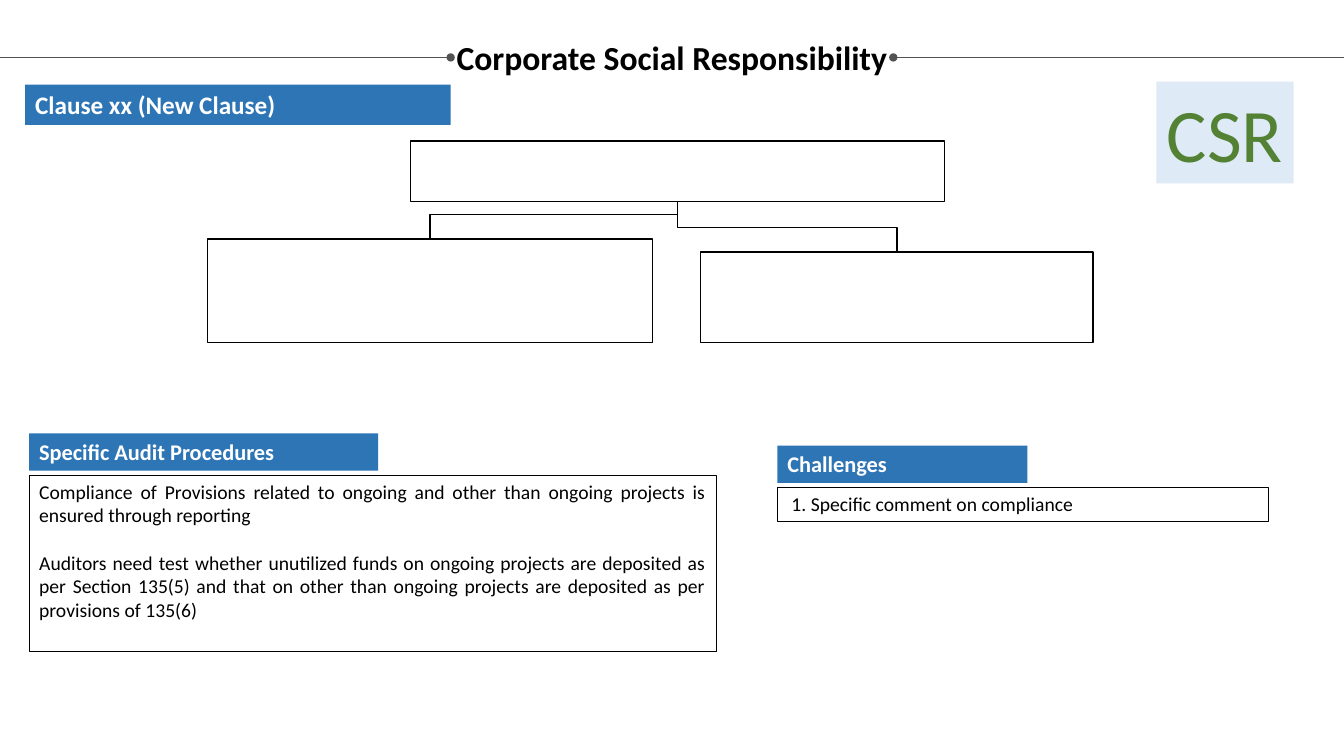
from dataclasses import dataclass

from lxml.etree import SubElement
from pptx import Presentation
from pptx.dml.color import RGBColor
from pptx.enum.shapes import MSO_CONNECTOR, MSO_SHAPE
from pptx.enum.text import MSO_ANCHOR, MSO_AUTO_SIZE, PP_ALIGN
from pptx.oxml.ns import qn
from pptx.util import Inches, Pt


@dataclass(frozen=True)
class Theme:
    font: str = "Calibri"
    ink: str = "000000"
    paper: str = "FFFFFF"
    rule: str = "525252"
    blue: str = "2E75B6"
    pale: str = "DEEBF7"
    green: str = "548235"
    title: int = 24
    clause: int = 18
    head: int = 16
    body: int = 14
    badge: int = 54
    thin: float = 0.25
    hair: float = 0.5
    edge: float = 1


THEME = Theme()
WIDTH, HEIGHT = 13.33, 7.5


def color(code):
    return RGBColor.from_string(code)


def write(frame, lines, size, ink, bold=False, align=PP_ALIGN.LEFT, gap=0):
    """Fill a text frame, one paragraph a line, with gap points between them."""
    frame.vertical_anchor = MSO_ANCHOR.TOP
    frame.auto_size = MSO_AUTO_SIZE.NONE
    for i, line in enumerate(lines):
        para = frame.paragraphs[0] if i == 0 else frame.add_paragraph()
        para.text = line
        para.alignment = align
        para.space_before = Pt(gap if i else 0)
        font = para.font
        font.name, font.size, font.bold = THEME.font, Pt(size), bold
        font.color.rgb = color(ink)


def add_box(slide, box, fill=None, edge=None):
    """Add a rectangle with an optional fill and black outline width."""
    shape = slide.shapes.add_shape(MSO_SHAPE.RECTANGLE, *map(Inches, box))
    shape.shadow.inherit = False
    if fill:
        shape.fill.solid()
        shape.fill.fore_color.rgb = color(fill)
    else:
        shape.fill.background()
    if edge:
        shape.line.color.rgb = color(THEME.ink)
        shape.line.width = Pt(edge)
    else:
        shape.line.fill.background()
    shape.text_frame.word_wrap = True
    return shape


def add_rule(slide, start, end, y):
    """Draw a level line that ends in a dot."""
    rule = slide.shapes.add_connector(
        MSO_CONNECTOR.STRAIGHT, Inches(start), Inches(y), Inches(end), Inches(y))
    rule.line.color.rgb = color(THEME.rule)
    rule.line.width = Pt(THEME.hair)
    SubElement(rule.line._get_or_add_ln(), qn("a:tailEnd"), type="oval")
    SubElement(rule._element.spPr, qn("a:effectLst"))


def add_title(slide, box, text, span):
    left, top, width, height = box
    mid = top + 0.16
    add_rule(slide, 0, (WIDTH - span) / 2, mid)
    add_rule(slide, WIDTH, (WIDTH + span) / 2, mid)
    title = slide.shapes.title
    title.left, title.top, title.width, title.height = map(Inches, box)
    frame = title.text_frame
    frame.margin_left = frame.margin_right = 0
    frame.margin_top = frame.margin_bottom = 0
    write(frame, [text], THEME.title, THEME.ink, True, PP_ALIGN.CENTER)
    frame.paragraphs[0].line_spacing = 0.9


def add_banner(slide, box, text, size):
    banner = add_box(slide, box, THEME.blue)
    write(banner.text_frame, [text], size, THEME.paper, True)


def add_panel(slide, box, head, width, lines, align, inset=0.1):
    """Place a banner at the top of the box and a framed text below it."""
    left, top, full, height = box
    add_banner(slide, (left, top, width, 0.37), head, THEME.head)
    drop = 0.41
    panel = add_box(slide, (left, top + drop, full, height - drop), edge=THEME.thin)
    panel.text_frame.margin_left = Inches(inset)
    write(panel.text_frame, lines, THEME.body, THEME.ink, align=align, gap=17)


def add_link(slide, start, end):
    """Join two points with an elbow that bends just above the lower one."""
    (x, y), (to, foot) = start, end
    bend = foot - 0.24
    path = slide.shapes.build_freeform(Inches(x), Inches(y))
    points = [(x, bend), (to, bend), (to, foot)]
    path.add_line_segments([(Inches(a), Inches(b)) for a, b in points], close=False)
    link = path.convert_to_shape()
    link.shadow.inherit = False
    link.fill.background()
    link.line.color.rgb = color(THEME.ink)
    link.line.width = Pt(THEME.edge)


def add_tree(slide, box):
    """Place an empty root over two empty branches."""
    left, top, width, height = box
    root = (left + 2.01, top, 5.3, 0.6)
    leaves = [(left, 4.41, 1.03), (left + width - 3.89, 3.89, 0.9)]
    start = (root[0] + root[2] / 2, top + root[3])
    for x, wide, tall in leaves:
        y = top + height - tall
        add_link(slide, start, (x + wide / 2, y))
        add_box(slide, (x, y, wide, tall), THEME.paper, THEME.edge)
    add_box(slide, root, THEME.paper, THEME.edge)


def add_badge(slide, box, text):
    badge = add_box(slide, box, THEME.pale)
    badge.text_frame.word_wrap = False
    write(badge.text_frame, [text], THEME.badge, THEME.green, align=PP_ALIGN.CENTER)


def main():
    deck = Presentation()
    deck.slide_width, deck.slide_height = Inches(WIDTH), Inches(HEIGHT)
    slide = deck.slides.add_slide(deck.slide_layouts[5])
    add_title(slide, (0.25, 0.41, 12.83, 0.36), "Corporate Social Responsibility", 4.39)
    add_banner(slide, (0.25, 0.84, 4.22, 0.4), "Clause xx (New Clause)", THEME.clause)
    add_panel(slide, (7.71, 4.42, 4.87, 0.75), "Challenges", 2.48,
              ["1. Specific comment on compliance"], PP_ALIGN.LEFT, 0.14)
    add_panel(slide, (0.29, 4.3, 6.81, 2.16), "Specific Audit Procedures", 3.46, [
        "Compliance of Provisions related to ongoing and other than ongoing "
        "projects is ensured through reporting",
        "Auditors need test whether unutilized funds on ongoing projects are "
        "deposited as per Section 135(5) and that on other than ongoing "
        "projects are deposited as per provisions of 135(6)",
    ], PP_ALIGN.JUSTIFY)
    add_tree(slide, (2.06, 1.4, 8.78, 2))
    add_badge(slide, (11.47, 0.81, 1.36, 1.01), "CSR")
    deck.save("out.pptx")


if __name__ == "__main__":
    main()
